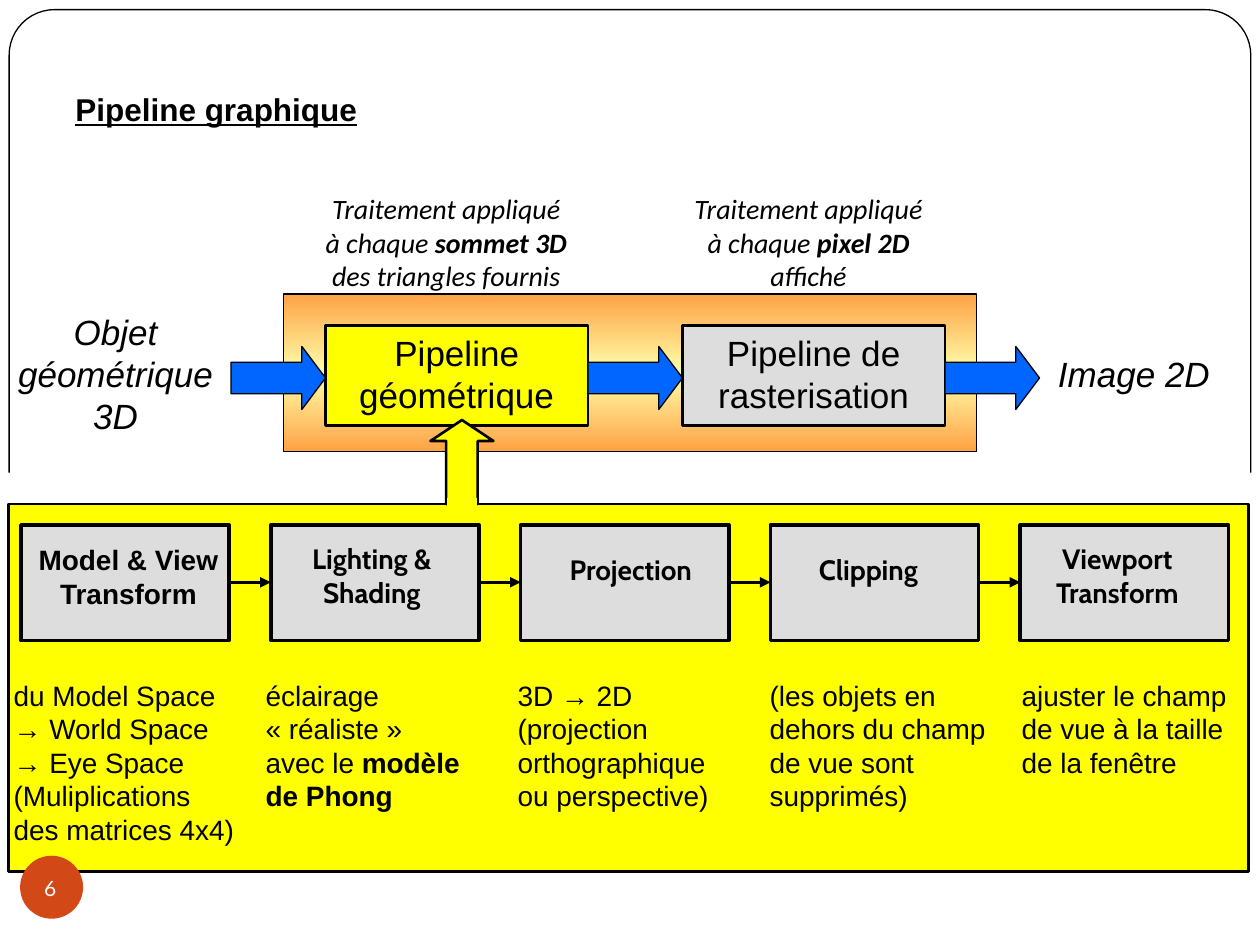
"""Build the slide on the stages of the graphics pipeline."""
from copy import deepcopy
from math import cos, pi, sin

from pptx import Presentation
from pptx.dml.color import RGBColor
from pptx.enum.shapes import MSO_CONNECTOR as Link, MSO_SHAPE as Kind
from pptx.enum.text import MSO_ANCHOR as Anchor, PP_ALIGN as Align
from pptx.oxml.ns import qn
from pptx.oxml.xmlchemy import OxmlElement as Node
from pptx.util import Pt

BLACK = RGBColor(0x00, 0x00, 0x00)
WHITE = RGBColor(0xFF, 0xFF, 0xFF)
YELLOW = RGBColor(0xFF, 0xFF, 0x00)
GREY = RGBColor(0xDD, 0xDD, 0xDD)
BLUE = RGBColor(0x00, 0x66, 0xFF)
ORANGE = RGBColor(0xFF, 0xA2, 0x45)
CREAM = RGBColor(0xFF, 0xFF, 0xAB)
RED = RGBColor(0xD3, 0x48, 0x17)

TITLE = "Pipeline graphique"
ENDS = [
    ("Objet géométrique 3D", (0, 174, 132, 79)),
    ("Image 2D", (588, 198, 120, 31)),
]
PIPES = [("Pipeline géométrique", YELLOW), ("Pipeline de rasterisation", GREY)]
NOTES = [
    ("Traitement appliqué à chaque *sommet 3D* des triangles fournis", (178.5, 106, 153, 65)),
    ("Traitement appliqué à chaque *pixel 2D* affiché", (388, 106, 148, 65)),
]
STAGES = [
    ("Model & View\nTransform", "Arial", (14.4, 306.5, 118, 46)),
    ("Lighting &\nShading", "Cabin", (163.5, 306, 98, 46)),
    ("Projection", "Cabin", (312, 312, 97, 27)),
    ("Clipping", "Cabin", (456, 312, 80.5, 27)),
    ("Viewport\nTransform", "Cabin", (589.5, 306, 98, 46)),
]
STEPS = [
    ["du Model Space", "éclairage", "3D → 2D", "(les objets en", "ajuster le champ"],
    ["→ World Space", "« réaliste »", "(projection", "dehors du champ", "de vue à la taille"],
    ["→ Eye Space", "avec le *modèle*", "orthographique", "de vue sont", "de la fenêtre"],
    ["(Muliplications", "*de Phong*", "ou perspective)", "supprimés)"],
    ["des matrices 4x4)"],
]
PAGE = "6"
PIPE_STEP, STAGE_STEP, STAGE_W, TAB = 204, 142.75, 119, 144

deck = Presentation()
deck.slide_width, deck.slide_height = Pt(720), Pt(540)
slide = deck.slides.add_slide(deck.slide_layouts[6])
shapes = slide.shapes


def put_shape(kind, place, fill, line=0):
    shape = shapes.add_shape(kind, *map(Pt, place))
    shape.shadow.inherit = False
    if fill:
        shape.fill.solid()
        shape.fill.fore_color.rgb = fill
    if line:
        shape.line.color.rgb = BLACK
        shape.line.width = Pt(line)
    else:
        shape.line.fill.background()
    return shape


def write(shape, text, size, font="Arial", align=Align.CENTER, wrap=True,
          bold=False, italic=False, color=BLACK):
    frame = shape.text_frame
    frame.word_wrap = wrap
    for i, line in enumerate(text.split("\n")):
        para = frame.add_paragraph() if i else frame.paragraphs[0]
        para.alignment = align
        for j, part in enumerate(line.split("*")):
            if part:
                run = para.add_run()
                run.text = part
                style = run.font
                style.name, style.size = font, Pt(size)
                style.bold, style.italic = bold or j % 2 == 1, italic
                style.color.rgb = color
    return frame


def put_text(place, *args, **style):
    return write(shapes.add_textbox(*map(Pt, place)), *args, **style)


def put_frame(left, top, right, base, radius):
    points = [(left, base)]
    for mid, start in ((left + radius, pi), (right - radius, 1.5 * pi)):
        for k in range(13):
            turn = start + k * pi / 24
            points.append((mid + radius * cos(turn), top + radius * (1 + sin(turn))))
    points.append((right, base))
    spots = [(Pt(x), Pt(y)) for x, y in points]
    pen = shapes.build_freeform(*spots[0])
    pen.add_line_segments(spots[1:], close=False)
    edge = pen.convert_to_shape()
    edge.shadow.inherit = False
    edge.fill.background()
    edge.line.color.rgb = BLACK
    edge.line.width = Pt(0.75)


def put_band(place):
    band = put_shape(Kind.RECTANGLE, place, None, 0.75)
    band.fill.gradient()
    band.fill.gradient_angle = 90
    stops = next(band._element.spPr.iter(qn("a:gsLst")))
    mid = deepcopy(stops[0])
    mid.set("pos", "50000")
    stops.insert(1, mid)
    for stop, color in zip(band.fill.gradient_stops, (ORANGE, CREAM, ORANGE)):
        stop.color.rgb = color


def put_link(start, end, y):
    link = shapes.add_connector(Link.STRAIGHT, Pt(start), Pt(y), Pt(end), Pt(y))
    link.line.color.rgb = BLACK
    link.line.width = Pt(2)
    tip = Node("a:tailEnd")
    tip.set("type", "triangle")
    link.line._get_or_add_ln().append(tip)
    link._element.spPr.append(Node("a:effectLst"))


def set_tabs(para, count):
    tabs = Node("a:tabLst")
    for i in range(1, count):
        tab = Node("a:tab")
        tab.set("pos", str(Pt(i * TAB)))
        tab.set("algn", "l")
        tabs.append(tab)
    para._p.get_or_add_pPr().append(tabs)


put_frame(5.25, 5.5, 714.75, 270, 26)
put_band((162, 168, 396, 90))
put_shape(Kind.RECTANGLE, (5, 288, 708.5, 210), YELLOW, 1.5)

for text, place in ENDS:
    put_text(place, text, 20, italic=True)
for i, (text, fill) in enumerate(PIPES):
    pipe = put_shape(Kind.RECTANGLE, (186 + i * PIPE_STEP, 186, 150, 57), fill, 1.5)
    write(pipe, text, 20).vertical_anchor = Anchor.TOP
for i in range(len(PIPES) + 1):
    arrow = put_shape(Kind.RIGHT_ARROW, (132 + i * PIPE_STEP, 198, 54, 36), BLUE, 0.75)
    arrow.adjustments[1] = 0.375

title = put_text((36, 48, 342, 36), TITLE, 18, align=Align.LEFT, bold=True)
title.paragraphs[0].runs[0].font.underline = True

for i, (text, font, place) in enumerate(STAGES):
    left = 12 + i * STAGE_STEP
    put_shape(Kind.RECTANGLE, (left, 300, STAGE_W, 66), GREY, 2)
    if i:
        put_link(left - STAGE_STEP + STAGE_W, left, 332.75)
    put_text(place, text, 16, font, wrap=False, bold=True)

table = "\n".join("\t".join(row) for row in STEPS)
steps = put_text((0.75, 384, 720, 104), table, 16, align=Align.LEFT)
for para in steps.paragraphs:
    set_tabs(para, len(STAGES))

rise = put_shape(Kind.UP_ARROW, (246, 240, 36, 48), YELLOW, 1.5)
rise.adjustments[1] = 0.333
put_shape(Kind.RECTANGLE, (255.5, 284.5, 17, 7), YELLOW)

for text, place in NOTES:
    put_text(place, text, 16, "Calibri", italic=True)

put_shape(Kind.OVAL, (11.5, 489, 36, 36), RED)
page = put_text((25.2, 499.5, 15, 15), PAGE, 12, "Lato", align=Align.LEFT, color=WHITE)
page.margin_left = page.margin_right = page.margin_top = page.margin_bottom = 0
page.paragraphs[0].line_spacing = Pt(15.2)

deck.save("out.pptx")
